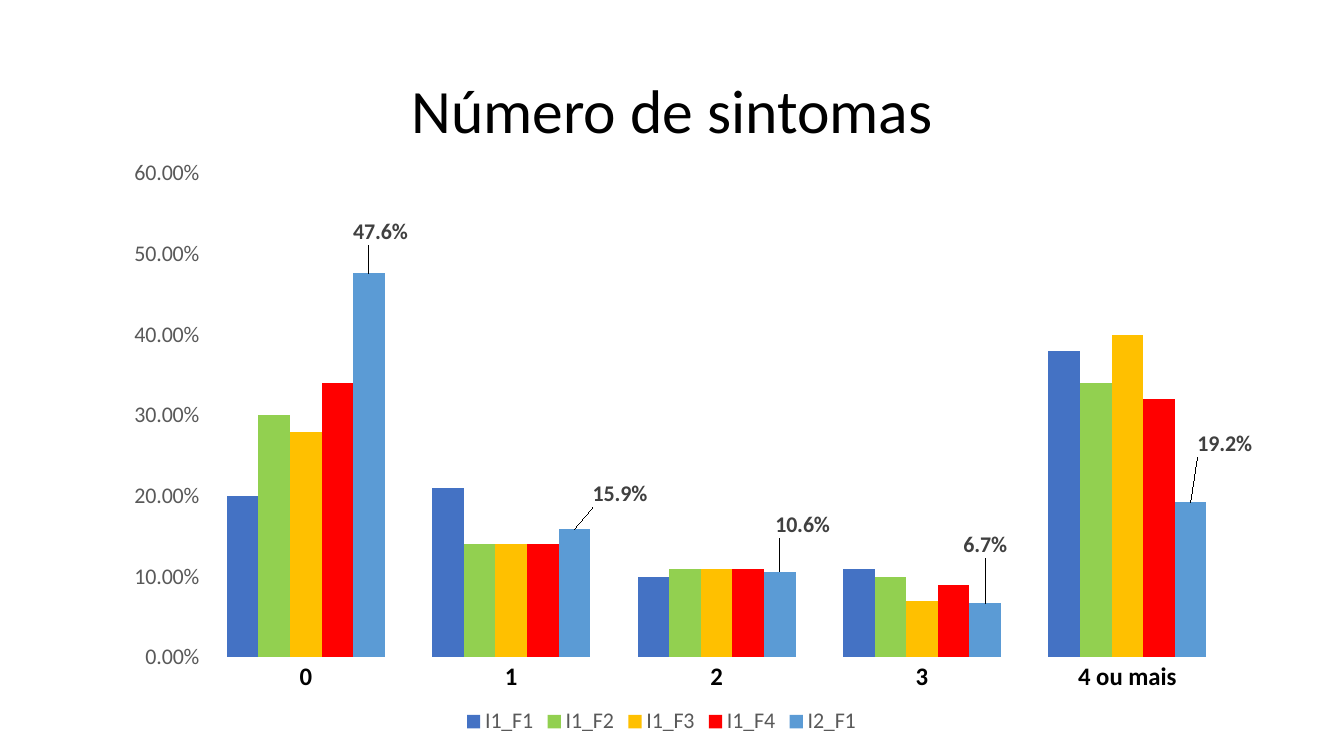
import pptx
import pptx.chart.data
import pptx.dml.color
import pptx.enum.chart
import pptx.enum.text
import pptx.oxml
import pptx.oxml.ns
import pptx.util

Inches = pptx.util.Inches
RGBColor = pptx.dml.color.RGBColor

FONT = "Calibri"
BLACK = RGBColor(0x00, 0x00, 0x00)
GREY = RGBColor(0x59, 0x59, 0x59)
DARK_GREY = RGBColor(0x40, 0x40, 0x40)
BLUE = RGBColor(0x44, 0x72, 0xC4)
GREEN = RGBColor(0x92, 0xD0, 0x50)
AMBER = RGBColor(0xFF, 0xC0, 0x00)
RED = RGBColor(0xFF, 0x00, 0x00)
LIGHT_BLUE = RGBColor(0x5B, 0x9B, 0xD5)

CATEGORIES = ["0", "1", "2", "3", "4 ou mais"]
SERIES = [
    ("I1_F1", BLUE, (0.2, 0.21, 0.1, 0.11, 0.38)),
    ("I1_F2", GREEN, (0.3, 0.14, 0.11, 0.1, 0.34)),
    ("I1_F3", AMBER, (0.28, 0.14, 0.11, 0.07, 0.4)),
    ("I1_F4", RED, (0.34, 0.14, 0.11, 0.09, 0.32)),
    ("I2_F1", LIGHT_BLUE, (0.476, 0.159, 0.106, 0.067, 0.192)),
]
# Shift of each label from its bar end, as a share of the chart size
LABEL_SHIFTS = [(0.01, -0.04), (0.04, -0.03), (0.02, -0.05), (0, -0.07), (0.03, -0.07)]
LABEL_FORMAT = "###0.0%"


def style_font(font, size, color, bold=False):
    font.name = FONT
    font.size = pptx.util.Pt(size)
    font.bold = bold
    font.color.rgb = color


def write_text(frame, text, size, color, bold=False, align=None, line_spacing=None):
    frame.text = text
    para = frame.paragraphs[0]
    para.alignment = align
    para.line_spacing = line_spacing
    style_font(para.runs[0].font, size, color, bold)


def chart_xml(body):
    return pptx.oxml.parse_xml(body.replace(">", f" {pptx.oxml.ns.nsdecls('c')}>", 1))


def manual_layout(x, y, extra_before="", extra_after=""):
    return chart_xml(
        f'<c:layout><c:manualLayout>{extra_before}<c:x val="{x}"/><c:y val="{y}"/>'
        f"{extra_after}</c:manualLayout></c:layout>"
    )


def place_title(page, box):
    title = page.shapes.title
    title.left, title.top, title.width, title.height = box
    title.text_frame.vertical_anchor = pptx.enum.text.MSO_ANCHOR.MIDDLE
    write_text(title.text_frame, "Número de sintomas", size=44, color=BLACK,
               align=pptx.enum.text.PP_ALIGN.CENTER, line_spacing=0.9)


def format_axes(chart):
    for axis, size, color, bold in ((chart.category_axis, 18, BLACK, True),
                                    (chart.value_axis, 16, GREY, False)):
        axis.has_major_gridlines = False
        axis.major_tick_mark = pptx.enum.chart.XL_TICK_MARK.NONE
        axis.minor_tick_mark = pptx.enum.chart.XL_TICK_MARK.NONE
        axis.format.line.fill.background()
        style_font(axis.tick_labels.font, size, color, bold)
    values = chart.value_axis
    values.minimum_scale, values.maximum_scale, values.major_unit = 0, 0.6, 0.1
    values.tick_labels.number_format = "0.00%"
    values.tick_labels.number_format_is_linked = False


def hide_leader_lines(chart):
    group = chart.element.xpath(".//c:ser/c:dLbls")[0]
    for old in group.xpath("./c:showLeaderLines"):
        group.remove(old)
    group.append(chart_xml(
        '<c:extLst><c:ext uri="{CE6537A1-D6FC-4f65-9D91-7224C49458BB}" '
        'xmlns:c15="http://schemas.microsoft.com/office/drawing/2012/chart">'
        '<c15:showLeaderLines val="0"/></c:ext></c:extLst>'))


def label_series(chart, series):
    labels = series.data_labels
    labels.show_value = True
    labels.number_format = LABEL_FORMAT
    labels.number_format_is_linked = False
    style_font(labels.font, 16, DARK_GREY, bold=True)
    for index in range(len(CATEGORIES)):
        label = series.points[index].data_label
        label.position = pptx.enum.chart.XL_LABEL_POSITION.OUTSIDE_END
        style_font(label.font, 16, DARK_GREY, bold=True)
    # Shifted labels: layout and number format follow the index element
    for element, (x, y) in zip(chart.element.xpath(".//c:dLbl"), LABEL_SHIFTS):
        element.insert(1, manual_layout(x, y))
        element.insert(2, chart_xml(
            f'<c:numFmt formatCode="{LABEL_FORMAT}" sourceLinked="0"></c:numFmt>'))
    hide_leader_lines(chart)


def place_chart(page, box):
    data = pptx.chart.data.CategoryChartData(number_format=LABEL_FORMAT)
    data.categories = CATEGORIES
    for name, _, values in SERIES:
        data.add_series(name, values)
    chart = page.shapes.add_chart(
        pptx.enum.chart.XL_CHART_TYPE.COLUMN_CLUSTERED, *box, data).chart
    style_font(chart.font, 10, BLACK)
    chart.has_title = False
    format_axes(chart)

    # Columns
    plot = chart.plots[0]
    plot.gap_width, plot.overlap = 150, 0
    plot.vary_by_categories = False
    for series, (_, color, _) in zip(plot.series, SERIES):
        series.format.fill.solid()
        series.format.fill.fore_color.rgb = color
    label_series(chart, plot.series[-1])

    # Legend
    chart.has_legend = True
    chart.legend.position = pptx.enum.chart.XL_LEGEND_POSITION.BOTTOM
    chart.legend.include_in_layout = False
    style_font(chart.legend.font, 16, GREY)

    # Plot area
    area = chart.element.xpath(".//c:plotArea")[0]
    for old in area.xpath("./c:layout"):
        area.remove(old)
    area.insert(0, manual_layout(
        0.097, 0.036,
        '<c:layoutTarget val="inner"/><c:xMode val="edge"/><c:yMode val="edge"/>',
        '<c:w val="0.903"/><c:h val="0.824"/>'))


def main():
    deck = pptx.Presentation()
    deck.slide_width, deck.slide_height = Inches(13.33), Inches(7.5)
    page = deck.slides.add_slide(deck.slide_layouts.get_by_name("Title Only"))
    left, width = Inches(0.92), Inches(11.5)
    place_title(page, (left, Inches(0.4), width, Inches(1.45)))
    place_chart(page, (left, Inches(1.51), width, Inches(5.83)))
    deck.save("out.pptx")


if __name__ == "__main__":
    main()
